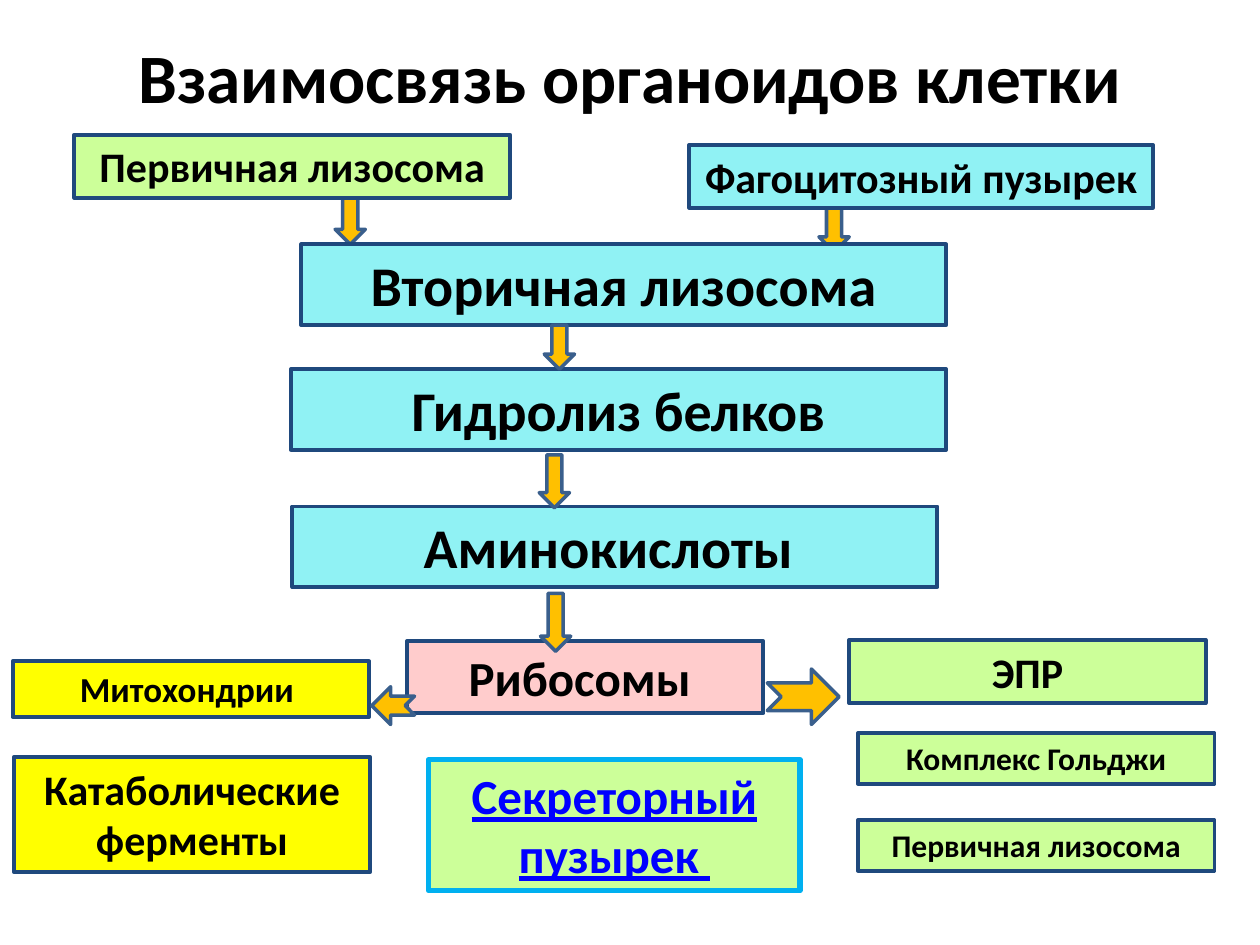
from pptx import Presentation
from pptx.dml.color import RGBColor
from pptx.enum.shapes import MSO_SHAPE as Shape
from pptx.enum.text import MSO_ANCHOR as Anchor, MSO_AUTO_SIZE as AutoSize, PP_ALIGN as Align
from pptx.util import Inches, Pt

BLACK = RGBColor(0x00, 0x00, 0x00)
LINK_BLUE = RGBColor(0x00, 0x00, 0xFF)
GREEN = RGBColor(0xCC, 0xFF, 0x99)
CYAN = RGBColor(0x90, 0xF2, 0xF4)
YELLOW = RGBColor(0xFF, 0xFF, 0x00)
PINK = RGBColor(0xFF, 0xCC, 0xCC)
ORANGE = RGBColor(0xFF, 0xC0, 0x00)
NAVY = RGBColor(0x1F, 0x49, 0x7D)
ARROW_BLUE = RGBColor(0x3A, 0x5F, 0x8C)
SKY = RGBColor(0x00, 0xB0, 0xF0)

TITLE = "Взаимосвязь органоидов клетки"
SMALL_WIDTH = 2.83
BOX_HEIGHTS = {18: 0.4, 20: 0.44, 24: 0.5, 28: 0.57, 32: 0.64}
BOXES = [
    ("Первичная лизосома", 0.59, 1.07, 3.46, 24, GREEN),
    ("Фагоцитозный пузырек", 5.47, 1.15, 3.68, 24, CYAN),
    ("Вторичная лизосома", 2.39, 1.94, 5.12, 32, CYAN),
    ("Гидролиз белков", 2.31, 2.93, 5.2, 32, CYAN),
    ("Аминокислоты ", 2.32, 4.02, 5.12, 32, CYAN),
    ("Митохондрии ", 0.1, 5.25, SMALL_WIDTH, 20, YELLOW),
    ("ЭПР", 6.74, 5.08, SMALL_WIDTH, 24, GREEN),
    ("Рибосомы ", 3.23, 5.09, SMALL_WIDTH, 28, PINK),
    ("Комплекс Гольджи", 6.81, 5.82, SMALL_WIDTH, 18, GREEN),
    ("Первичная лизосома", 6.81, 6.51, SMALL_WIDTH, 18, GREEN),
]
ENZYMES = ("Катаболические ферменты", 0.11, 6.01, SMALL_WIDTH, 24, YELLOW)
VESICLE = ("Секреторный пузырек ", 3.4, 6.03, 2.95, 28, GREEN)

ARROW_WIDTH = 0.24
ARROWS_BEHIND = [(2.66, 1.39, 0.55), (6.5, 1.48, 0.52)]
ARROWS_IN_FRONT = [(4.32, 2.58, 0.35), (4.28, 3.61, 0.42), (4.29, 4.71, 0.46)]
SIDE_ARROWS = [(2.95, 5.45, 0.34, 0.3, 180), (6.09, 5.31, 0.57, 0.44, 0)]


def write_text(shape, text, size, **extra):
    frame = shape.text_frame
    frame.word_wrap = True
    paragraph = frame.paragraphs[0]
    paragraph.alignment = Align.CENTER
    run = paragraph.add_run()
    run.text = text
    font_format = {"name": "Calibri", "size": Pt(size), "bold": True, **extra}
    for name, value in font_format.items():
        setattr(run.font, name, value)
    return frame


def add_filled(slide, kind, bounds, fill, line, line_width):
    shape = slide.shapes.add_shape(kind, *map(Inches, bounds))
    shape.shadow.inherit = False
    shape.fill.solid()
    shape.fill.fore_color.rgb = fill
    shape.line.color.rgb = line
    shape.line.width = Pt(line_width)
    return shape


def add_box(slide, box, height=None, line=NAVY, line_width=2.25, color=BLACK, **extra):
    text, left, top, width, size, fill = box
    bounds = (left, top, width, height or BOX_HEIGHTS[size])
    shape = add_filled(slide, Shape.RECTANGLE, bounds, fill, line, line_width)
    frame = write_text(shape, text, size, **extra)
    frame.paragraphs[0].runs[0].font.color.rgb = color
    frame.vertical_anchor = Anchor.TOP
    frame.auto_size = AutoSize.SHAPE_TO_FIT_TEXT


def add_arrow(slide, kind, bounds, rotation=0):
    shape = add_filled(slide, kind, bounds, ORANGE, ARROW_BLUE, 2)
    shape.rotation = rotation


def add_down_arrows(slide, arrows):
    for left, top, height in arrows:
        add_arrow(slide, Shape.DOWN_ARROW, (left, top, ARROW_WIDTH, height))


def main():
    presentation = Presentation()
    presentation.slide_width = Inches(10)
    presentation.slide_height = Inches(7.5)
    slide = presentation.slides.add_slide(presentation.slide_layouts[6])

    add_down_arrows(slide, ARROWS_BEHIND)
    title = slide.shapes.add_textbox(*map(Inches, (0.5, 0.3, 9, 0.61)))
    frame = write_text(title, TITLE, 39.6)
    frame.paragraphs[0].runs[0].font.color.rgb = BLACK
    frame.vertical_anchor = Anchor.MIDDLE

    for box in BOXES:
        add_box(slide, box)
    add_box(slide, ENZYMES, height=0.91)
    add_down_arrows(slide, ARROWS_IN_FRONT)
    for *bounds, rotation in SIDE_ARROWS:
        add_arrow(slide, Shape.NOTCHED_RIGHT_ARROW, bounds, rotation)
    add_box(slide, VESICLE, height=1.04, line=SKY, line_width=3, color=LINK_BLUE, underline=True)

    presentation.save("out.pptx")


if __name__ == "__main__":
    main()
